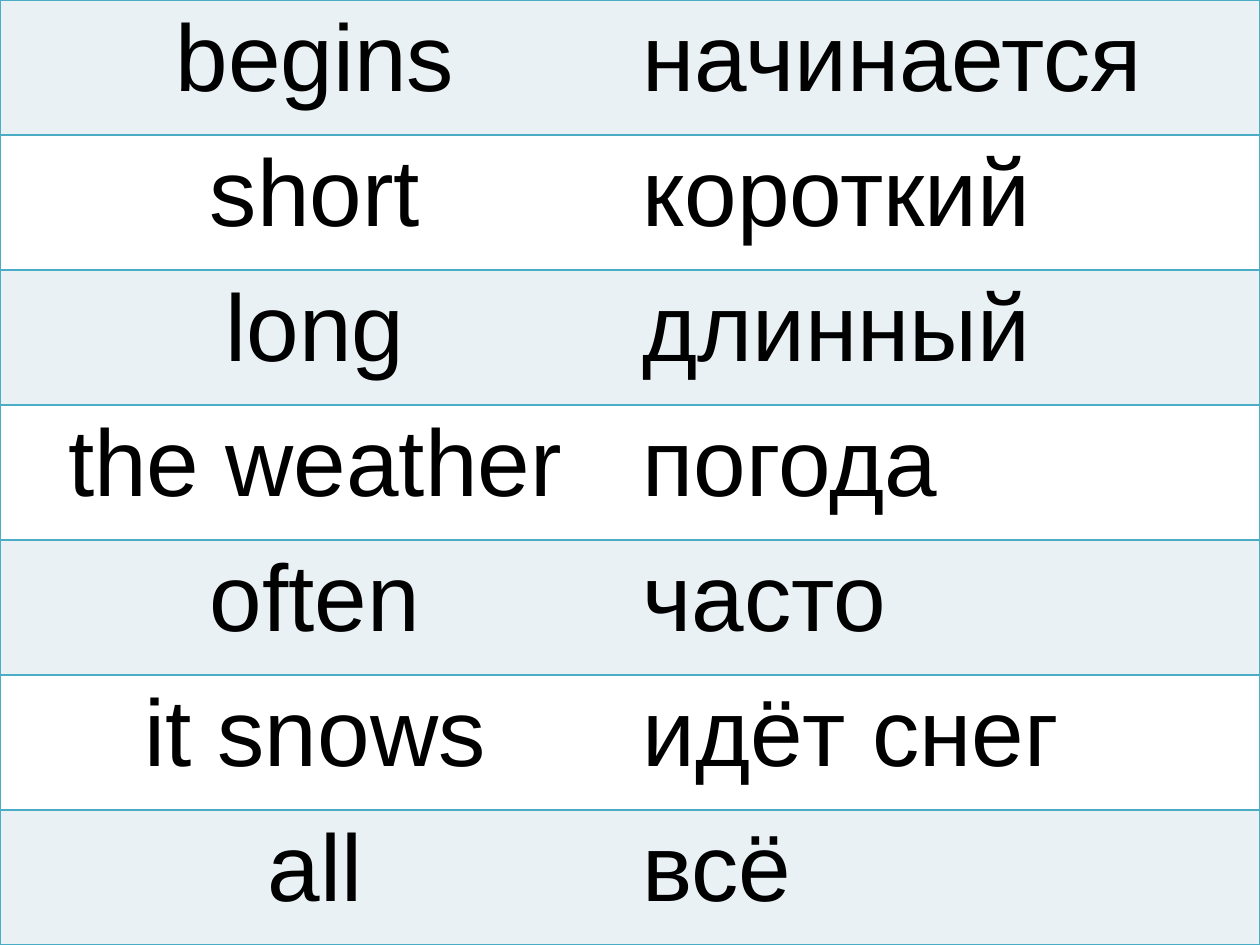
from lxml import etree
from pptx import Presentation
from pptx import util as u
from pptx.dml.color import RGBColor
from pptx.enum import text
from pptx.oxml import ns

WORDS = [
    ("begins", "начинается"),
    ("short", "короткий"),
    ("long", "длинный"),
    ("the weather", "погода"),
    ("often", "часто"),
    ("it snows", "идёт снег"),
    ("all", "всё"),
]
WIDTH, HEIGHT = 10, 7.5


def color(value):
    return RGBColor.from_string(value)


class VocabularySlide:
    font = "Arial"
    size = 54
    ink = "000000"
    border = "4BACC6"
    bands = ("E9F1F5", "FFFFFF")
    alignments = (text.PP_ALIGN.CENTER, text.PP_ALIGN.LEFT)

    def __init__(self, deck):
        self.page = deck.slides.add_slide(deck.slide_layouts[6])

    def borders(self, cell, hidden):
        properties = cell._tc.get_or_add_tcPr()
        for side in ("lnL", "lnR", "lnT", "lnB"):
            line = etree.SubElement(properties, ns.qn(f"a:{side}"), w=str(u.Pt(1)))
            if side == hidden:
                etree.SubElement(line, ns.qn("a:noFill"))
            else:
                fill = etree.SubElement(line, ns.qn("a:solidFill"))
                etree.SubElement(fill, ns.qn("a:srgbClr"), val=self.border)

    def cell(self, cell, word, band, alignment, hidden):
        self.borders(cell, hidden)
        cell.fill.solid()
        cell.fill.fore_color.rgb = color(band)
        para = cell.text_frame.paragraphs[0]
        para.alignment = alignment
        span = para.add_run()
        span.text = word
        span.font.name = self.font
        span.font.size = u.Pt(self.size)
        span.font.color.rgb = color(self.ink)

    def table(self, rows):
        frame = self.page.shapes.add_table(
            len(rows), 2, 0, 0, u.Inches(WIDTH), u.Inches(HEIGHT)
        )
        table = frame.table
        table.first_row = False
        table.horz_banding = False
        for row, words in enumerate(rows):
            for column, word in enumerate(words):
                self.cell(
                    table.cell(row, column),
                    word,
                    self.bands[row % 2],
                    self.alignments[column],
                    ("lnR", "lnL")[column],
                )


def main():
    deck = Presentation()
    deck.slide_width = u.Inches(WIDTH)
    deck.slide_height = u.Inches(HEIGHT)
    VocabularySlide(deck).table(WORDS)
    deck.save("out.pptx")


if __name__ == "__main__":
    main()
